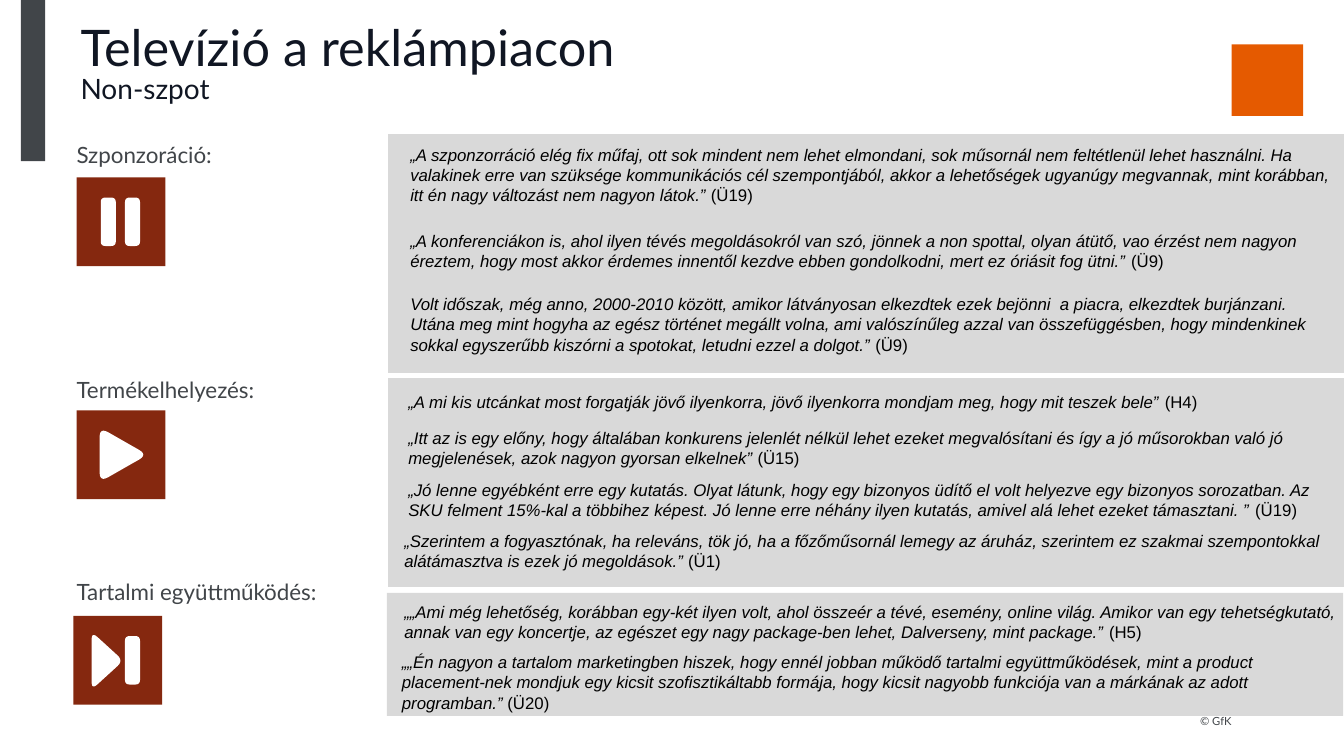
from pptx import Presentation
from pptx import util as u
from pptx.dml import color
from pptx.enum import shapes, text

COLOURS = {"slate": "414549", "ink": "101623", "panel": "D9D9D9", "rust": "85280F",
           "orange": "E55A00", "white": "FFFFFF", "black": "000000"}
LABEL = {"name": "Lato", "size": u.Pt(16), "colour": "slate"}
TITLE = {"name": "Lato", "size": u.Pt(36), "colour": "ink"}
SUBTITLE = {**TITLE, "size": u.Pt(20)}
FOOTER = {**LABEL, "size": u.Pt(8)}
QUOTE = {"name": "Arial", "size": u.Pt(12), "colour": "black", "italic": True}
SOURCE = {**QUOTE, "italic": False}

PANELS = [(9.78, 3.38, 24.1, 6.02), (9.78, 9.53, 24.1, 5.26), (9.75, 14.94, 24.1, 3.1)]
QUOTES = [
    (10.34, 3.45, 23.27, "„A szponzorráció elég fix műfaj, ott sok mindent nem lehet elmondani, sok műsornál nem feltétlenül lehet használni. Ha valakinek erre van szüksége kommunikációs cél szempontjából, akkor a lehetőségek ugyanúgy megvannak, mint korábban, itt én nagy változást nem nagyon látok.” ", "(Ü19)"),
    (10.34, 5.61, 23.27, "„A konferenciákon is, ahol ilyen tévés megoldásokról van szó, jönnek a non spottal, olyan átütő, vao érzést nem nagyon éreztem, hogy most akkor érdemes innentől kezdve ebben gondolkodni, mert ez óriásit fog ütni.” ", "(Ü9)"),
    (10.34, 7.21, 23.27, "Volt időszak, még anno, 2000-2010 között, amikor látványosan elkezdtek ezek bejönni  a piacra, elkezdtek burjánzani. Utána meg mint hogyha az egész történet megállt volna, ami valószínűleg azzal van összefüggésben, hogy mindenkinek sokkal egyszerűbb kiszórni a spotokat, letudni ezzel a dolgot.” ", "(Ü9)"),
    (10.29, 9.68, 23.27, "„A mi kis utcánkat most forgatják jövő ilyenkorra, jövő ilyenkorra mondjam meg, hogy mit teszek bele” ", "(H4)"),
    (10.29, 10.57, 23.27, "„Itt az is egy előny, hogy általában konkurens jelenlét nélkül lehet ezeket megvalósítani és így a jó műsorokban való jó megjelenések, azok nagyon gyorsan elkelnek” ", "(Ü15)"),
    (10.29, 11.89, 23.55, "„Jó lenne egyébként erre egy kutatás. Olyat látunk, hogy egy bizonyos üdítő el volt helyezve egy bizonyos sorozatban. Az SKU felment 15%-kal a többihez képest. Jó lenne erre néhány ilyen kutatás, amivel alá lehet ezeket támasztani. ” ", "(Ü19)"),
    (10.19, 13.18, 23.27, "„Szerintem a fogyasztónak, ha releváns, tök jó, ha a főzőműsornál lemegy az áruház, szerintem ez szakmai szempontokkal alátámasztva is ezek jó megoldások.” ", "(Ü1)"),
    (10.19, 14.96, 23.67, "„„Ami még lehetőség, korábban egy-két ilyen volt, ahol összeér a tévé, esemény, online világ. Amikor van egy tehetségkutató, annak van egy koncertje, az egészet egy nagy package-ben lehet, Dalverseny, mint package.” ", "(H5)"),
    (10.13, 16.23, 23.44, "„„Én nagyon a tartalom marketingben hiszek, hogy ennél jobban működő tartalmi együttműködések, mint a product placement-nek mondjuk egy kicsit szofisztikáltabb formája, hogy kicsit nagyobb funkciója van a márkának az adott programban.” ", "(Ü20)"),
]


def bar(left, right):
    """Return the corners of an upright bar inside an icon."""
    return [(left, 0.51), (right, 0.51), (right, 1.73), (left, 1.73)], 0.12


PAUSE = [bar(0.61, 0.99), bar(1.22, 1.6)]
PLAY = [([(0.58, 0.43), (1.79, 1.12), (0.58, 1.81)], 0.25)]
SKIP = [([(0.46, 0.4), (1.26, 1.13), (0.46, 1.86)], 0.2), bar(1.3, 1.68)]
TOPICS = [("Szponzoráció:", 3.38, 1.93, 4.47, PAUSE),
          ("Termékelhelyezés:", 9.31, 1.93, 10.34, PLAY),
          ("Tartalmi együttműködés:", 14.39, 1.85, 15.52, SKIP)]


def paint(shape, colour):
    """Give a shape a flat fill with no line or shadow."""
    shape.shadow.inherit = False
    shape.fill.solid()
    shape.fill.fore_color.rgb = color.RGBColor.from_string(COLOURS[colour])
    shape.line.fill.background()


def add_rectangle(slide, box, colour):
    """Add a flat rectangle."""
    paint(slide.shapes.add_shape(shapes.MSO_SHAPE.RECTANGLE, *map(u.Cm, box)), colour)


def add_run(paragraph, words, formats):
    """Add a run formatted from a dict."""
    run = paragraph.add_run()
    run.text = words
    for key, value in formats.items():
        if key == "colour":
            run.font.color.rgb = color.RGBColor.from_string(COLOURS[value])
        else:
            setattr(run.font, key, value)


def add_text(slide, box, runs, spacing=1.0, **frame_formats):
    """Add a wrapped text box with one paragraph and return the paragraph."""
    frame = slide.shapes.add_textbox(*map(u.Cm, box)).text_frame
    formats = {"word_wrap": True, "margin_left": 0, "margin_top": 0,
               "margin_right": 0, "margin_bottom": 0, **frame_formats}
    for key, value in formats.items():
        setattr(frame, key, value)
    paragraph = frame.paragraphs[0]
    paragraph.line_spacing = spacing
    for words, run_formats in runs:
        if words == "\n":
            paragraph.add_line_break()
        else:
            add_run(paragraph, words, run_formats)
    return paragraph


def toward(start, end, distance):
    """Return the point at a distance from start on the way to end."""
    length = ((end[0] - start[0]) ** 2 + (end[1] - start[1]) ** 2) ** 0.5
    return tuple(a + (b - a) * distance / length for a, b in zip(start, end))


def round_corners(corners, cut, steps=6):
    """Return a polygon whose corners are replaced by short curves."""
    points = []
    for index, corner in enumerate(corners):
        first = toward(corner, corners[index - 1], cut)
        last = toward(corner, corners[(index + 1) % len(corners)], cut)
        for step in range(steps + 1):
            t = step / steps
            points.append(tuple((1 - t) ** 2 * a + 2 * t * (1 - t) * b + t ** 2 * c
                                for a, b, c in zip(first, corner, last)))
    return points


def add_icon(slide, left, top, glyph):
    """Add a square button with a white playback symbol."""
    add_rectangle(slide, (left, top, 2.24, 2.24), "rust")
    for corners, cut in glyph:
        points = [(u.Cm(left + x), u.Cm(top + y)) for x, y in round_corners(corners, cut)]
        builder = slide.shapes.build_freeform(*points[0])
        builder.add_line_segments(points[1:], close=True)
        paint(builder.convert_to_shape(), "white")


def main():
    """Build and save the slide."""
    presentation = Presentation()
    presentation.slide_width, presentation.slide_height = u.Cm(33.87), u.Cm(19.05)
    slide = presentation.slides.add_slide(presentation.slide_layouts[6])
    add_rectangle(slide, (31.04, 1.12, 1.8, 1.8), "orange")
    add_rectangle(slide, (0.53, 0, 0.61, 4.06), "slate")
    footer = add_text(slide, (29.64, 17.96, 1.4, 0.38), [("© GfK", FOOTER)], 1.25,
                      vertical_anchor=text.MSO_ANCHOR.BOTTOM)
    footer.alignment = text.PP_ALIGN.RIGHT
    add_text(slide, (2.03, 0.64, 21.46, 1.37),
             [("Televízió a reklámpiacon", TITLE), ("\n", {}), ("Non-szpot", SUBTITLE)], 0.85)
    for panel in PANELS:
        add_rectangle(slide, panel, "panel")
    for label, label_top, left, top, glyph in TOPICS:
        add_text(slide, (1.93, label_top, 7.5, 0.85), [(label, LABEL)], 1.25)
        add_icon(slide, left, top, glyph)
    for left, top, width, words, source in QUOTES:
        add_text(slide, (left, top, width, 1.75), [(words, QUOTE), (source, SOURCE)],
                 margin_top=u.Cm(0.2))
    presentation.save("out.pptx")


if __name__ == "__main__":
    main()
